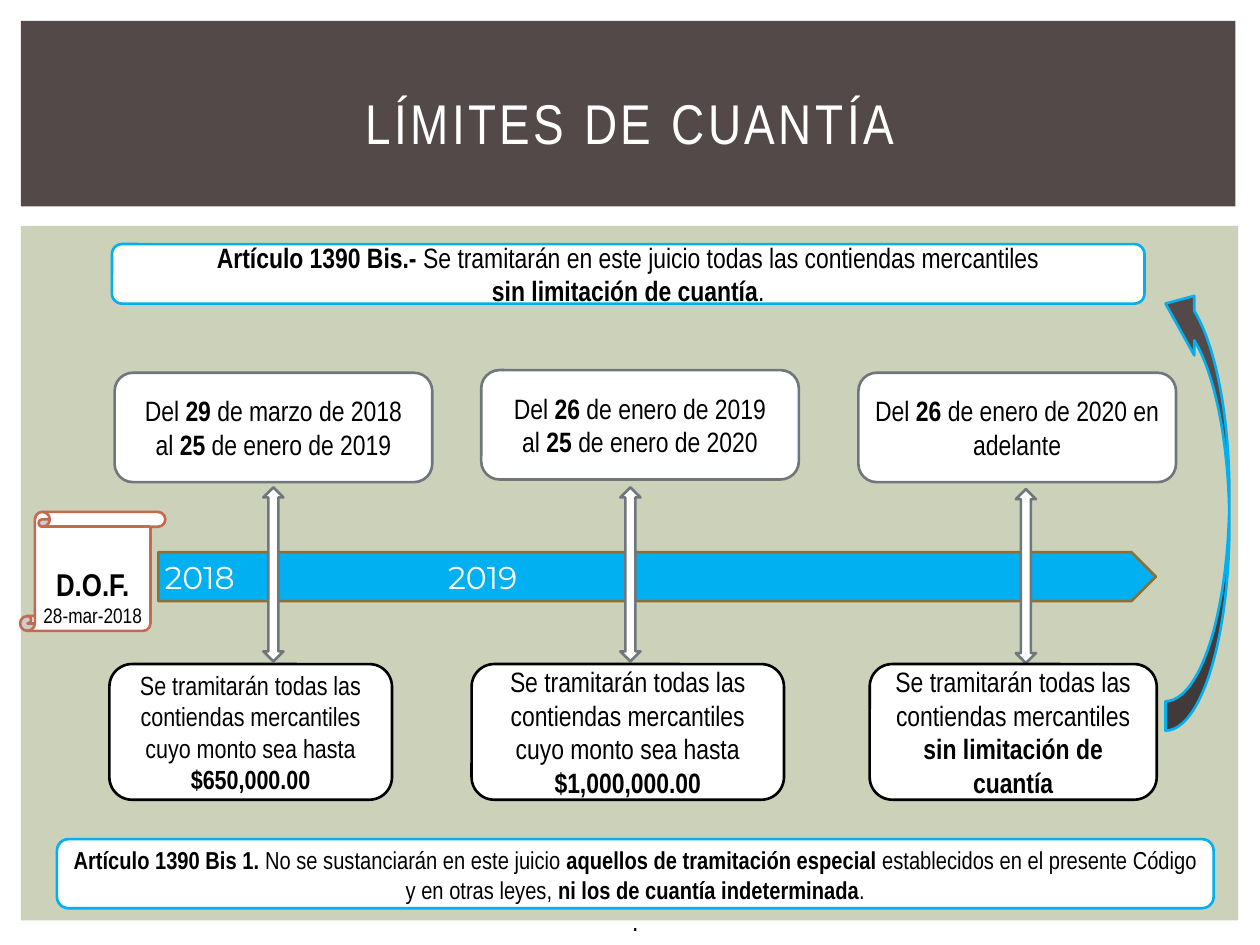
"""Build the slide on amount limits for commercial trials."""
from lxml import etree
from pptx import Presentation
from pptx.dml.color import RGBColor
from pptx.enum.shapes import MSO_SHAPE
from pptx.enum.text import MSO_ANCHOR, PP_ALIGN
from pptx.oxml.ns import qn
from pptx.util import Pt

RECTANGLE = MSO_SHAPE.RECTANGLE
ROUNDED = MSO_SHAPE.ROUNDED_RECTANGLE
SCROLL = MSO_SHAPE.VERTICAL_SCROLL
PENTAGON = MSO_SHAPE.PENTAGON
DOUBLE_ARROW = MSO_SHAPE.UP_DOWN_ARROW
CURVED_ARROW = MSO_SHAPE.CURVED_RIGHT_ARROW
TOP, MIDDLE = MSO_ANCHOR.TOP, MSO_ANCHOR.MIDDLE
CENTER, JUSTIFY = PP_ALIGN.CENTER, PP_ALIGN.JUSTIFY

WHITE = RGBColor(0xFF, 0xFF, 0xFF)
BLACK = RGBColor(0x00, 0x00, 0x00)
BROWN = RGBColor(0x53, 0x49, 0x49)
SAGE = RGBColor(0xCC, 0xD1, 0xB9)
BLUE = RGBColor(0x00, 0xB0, 0xF0)
GRAY = RGBColor(0x6F, 0x77, 0x7D)
RUST = RGBColor(0xC6, 0x69, 0x51)
BRONZE = RGBColor(0x8B, 0x6E, 0x38)
FONT = "Arial Narrow"

presentation = Presentation()
presentation.slide_width, presentation.slide_height = Pt(720), Pt(540)
slide = presentation.slides.add_slide(presentation.slide_layouts[6])


def add_figure(kind, left, top, width, height, fill, line=None):
    shape = slide.shapes.add_shape(kind, Pt(left), Pt(top), Pt(width), Pt(height))
    shape.shadow.inherit = False
    shape.fill.solid()
    shape.fill.fore_color.rgb = fill
    if line is None:
        shape.line.fill.background()
    else:
        shape.line.color.rgb = line
        shape.line.width = Pt(1.5)
    return shape


def write(shape, lines, sizes, color=BLACK, font=FONT, anchor=MIDDLE, margin_top=3.6):
    """Write one paragraph per line, with the words between asterisks in bold."""
    frame = shape.text_frame
    frame.word_wrap = True
    frame.vertical_anchor = anchor
    frame.margin_left = frame.margin_right = frame.margin_bottom = Pt(3.6)
    frame.margin_top = Pt(margin_top)
    frame.text = "\n".join(lines)
    for paragraph, line, size in zip(frame.paragraphs, lines, sizes):
        paragraph.text = ""
        paragraph.alignment = CENTER
        for index, words in enumerate(line.split("*")):
            if words:
                run = paragraph.add_run()
                run.text = words
                run.font.name = font
                run.font.size = Pt(size)
                run.font.bold = index % 2 == 1
                run.font.color.rgb = color
    return frame


add_figure(RECTANGLE, 12, 129, 695.5, 397, SAGE)
add_figure(RECTANGLE, 12, 12, 694, 106, BROWN)
title = slide.shapes.add_textbox(Pt(30), Pt(28), Pt(660), Pt(83))
title_frame = write(title, ["LÍMITES DE CUANTÍA"], [32], WHITE)
title_frame.paragraphs[0].runs[0].font._element.set("spc", "200")

scroll = add_figure(SCROLL, 11.5, 292.5, 83, 68, WHITE, RUST)
write(scroll, ["*D.O.F.*", "28-mar-2018"], [18, 12], anchor=TOP, margin_top=22)

article = add_figure(ROUNDED, 64, 139.5, 590, 34, WHITE, BLUE)
write(article, ["*Artículo 1390 Bis.- *Se tramitarán en este juicio todas las contiendas mercantiles",
                "*sin limitación de cuantía*."], [16, 16])

timeline = add_figure(PENTAGON, 90.5, 315.5, 570, 28, BLUE, BRONZE)
years = write(timeline, ["2018\t2019"], [18], WHITE, "Montserrat").paragraphs[0]
years.alignment = JUSTIFY
tab_list = etree.SubElement(years._p.get_or_add_pPr(), qn("a:tabLst"))
etree.SubElement(tab_list, qn("a:tab"), pos=str(Pt(162)), algn="l")

amount = "Se tramitarán todas las contiendas mercantiles cuyo monto sea hasta "
stages = [
    (65.5, 213, ["Del *29* de marzo de 2018", "al *25* de enero de 2019"],
     150.5, 278.5, 62.5, 161.5, 15, [amount + "*$650,000.00*"]),
    (275, 211.5, ["Del *26* de enero de 2019", "al *25* de enero de 2020"],
     354.5, 278.5, 269.5, 178.5, 16, [amount + "*$1,000,000.00*"]),
    (490.5, 213, ["Del *26* de enero de 2020 en adelante"],
     580.5, 279.5, 497, 164, 16,
     ["Se tramitarán todas las contiendas mercantiles", "*sin limitación de cuantía*"]),
]
for (period_left, period_top, period, arrow_left, arrow_top,
     limit_left, limit_width, limit_size, limit) in stages:
    add_figure(DOUBLE_ARROW, arrow_left, arrow_top, 11.5, 99.5, WHITE, GRAY)
    period_box = add_figure(ROUNDED, period_left, period_top, 181.5, 62.5, WHITE, GRAY)
    write(period_box, period, [16, 16])
    limit_box = add_figure(ROUNDED, limit_left, 379.5, limit_width, 77.5, WHITE, BLACK)
    write(limit_box, limit, [limit_size, limit_size])

return_arrow = add_figure(CURVED_ARROW, 666, 156.5, 36.5, 261, BROWN, BLUE)
return_arrow.rotation = 180
for index, value in enumerate((0.46, 0.93, 0.45)):
    return_arrow.adjustments[index] = value

exclusion = add_figure(ROUNDED, 32.5, 479.5, 661, 39.5, WHITE, BLUE)
write(exclusion, ["*Artículo 1390 Bis 1.* No se sustanciarán en este juicio "
                  "*aquellos de tramitación especial *establecidos en el presente Código "
                  "y en otras leyes, *ni los de cuantía indeterminada*.", "."],
      [14, 16], anchor=TOP, margin_top=1.5)

presentation.save("out.pptx")
